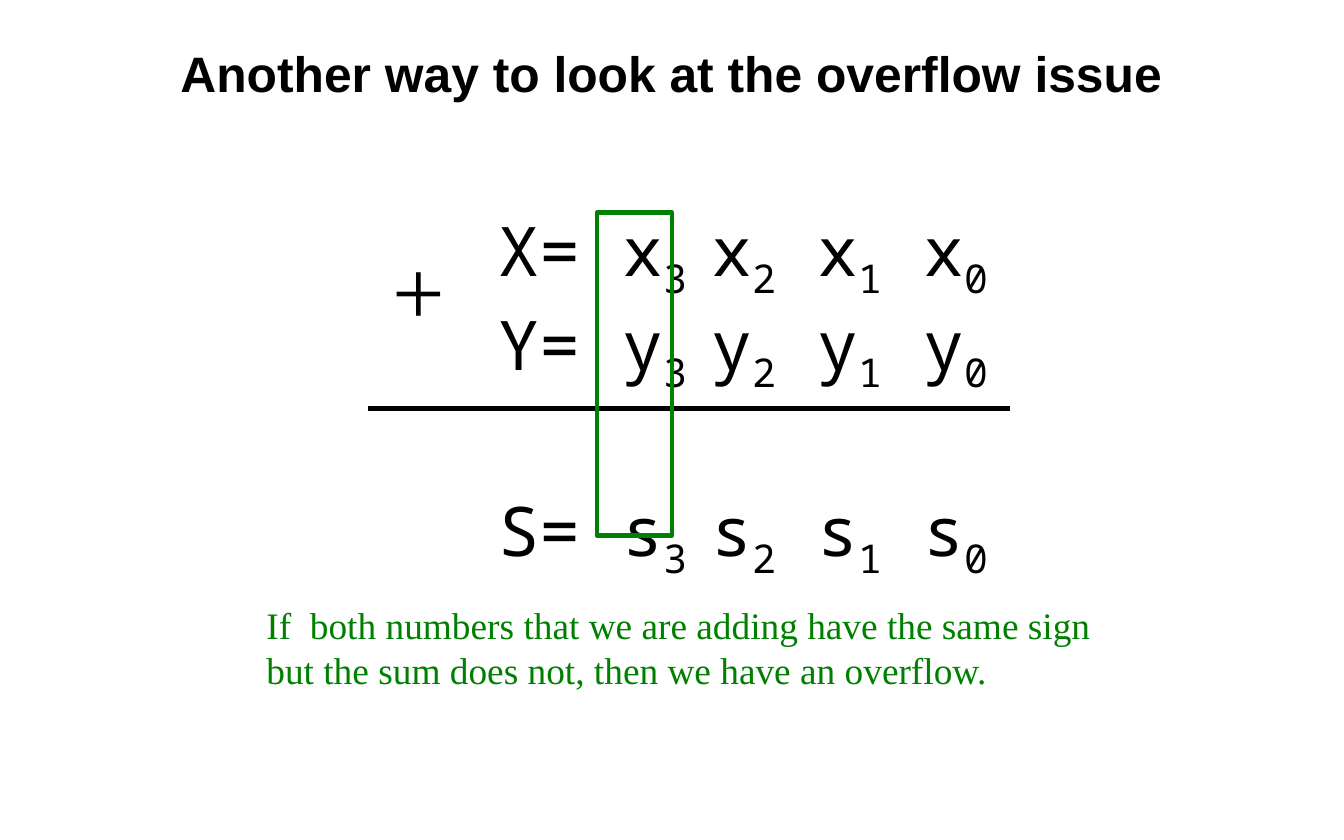
import pptx
import pptx.util
import pptx.dml.color
import pptx.enum.shapes
import pptx.enum.text
import pptx.oxml.ns
import lxml.etree

Inches = pptx.util.Inches
Pt = pptx.util.Pt
ALIGN = pptx.enum.text.PP_ALIGN
COLORS = {"ink": "000000", "mark": "008000"}


def rgb(name):
    return pptx.dml.color.RGBColor.from_string(COLORS[name])


def add_run(para, text, size, face, color="ink", bold=False, sub=False):
    run = para.add_run()
    run.text = text
    run.font.size = Pt(size)
    run.font.name = face
    run.font.bold = bold
    run.font.color.rgb = rgb(color)
    if sub:
        run.font._element.set("baseline", "-25000")


deck = pptx.Presentation()
deck.slide_width = Inches(12)
deck.slide_height = Inches(7.5)
slide = deck.slides.add_slide(deck.slide_layouts[6])
shapes = slide.shapes

# Sum: one row per number, digits 3 to 0 as subscripts
box = shapes.add_textbox(Inches(3.5), Inches(1.81), Inches(5.42), Inches(3.31))
frame = box.text_frame
frame.word_wrap = True
for row, name in enumerate("XYS"):
    para = frame.add_paragraph() if row else frame.paragraphs[0]
    para.alignment = ALIGN.RIGHT
    if name == "S":
        para.space_before = Pt(60)
    low = name.lower()
    parts = [(f"{name}= {low}", "3 "), (low, "2"), (f" {low}", "1"), (f" {low}", "0")]
    for base, digit in parts:
        add_run(para, base, 44, "Noto Sans Mono")
        add_run(para, digit, 44, "Noto Sans Mono", sub=True)

# Rule above the result
rule = shapes.add_connector(
    pptx.enum.shapes.MSO_CONNECTOR.STRAIGHT,
    Inches(3.29), Inches(3.65), Inches(9.02), Inches(3.65))
rule.line.color.rgb = rgb("ink")
rule.line.width = Pt(3)
lxml.etree.SubElement(rule._element.spPr, pptx.oxml.ns.qn("a:effectLst"))

# Plus sign, title and note
texts = [
    (3.41, 2.02, 0.68, 1.11, ["+"], 60, "Times New Roman", "ink", False),
    (1, 0.33, 10, 0.83, ["Another way to look at the overflow issue"],
     32, "Arial", "ink", True),
    (2.28, 5.33, 7.72, 0.91,
     ["If  both numbers that we are adding have the same sign",
      "but the sum does not, then we have an overflow."],
     24, "Times New Roman", "mark", False),
]
for left, top, width, height, lines, size, face, color, bold in texts:
    box = shapes.add_textbox(Inches(left), Inches(top), Inches(width), Inches(height))
    frame = box.text_frame
    frame.word_wrap = bold
    if bold:
        frame.vertical_anchor = pptx.enum.text.MSO_ANCHOR.TOP
    for place, line in enumerate(lines):
        para = frame.add_paragraph() if place else frame.paragraphs[0]
        para.alignment = ALIGN.CENTER if bold else ALIGN.LEFT
        add_run(para, line, size, face, color, bold)

# Frame around the sign bits
sign = shapes.add_shape(
    pptx.enum.shapes.MSO_SHAPE.RECTANGLE,
    Inches(5.33), Inches(1.9), Inches(0.67), Inches(2.88))
sign.shadow.inherit = False
sign.fill.background()
sign.line.color.rgb = rgb("mark")
sign.line.width = Pt(3)

deck.save("out.pptx")
